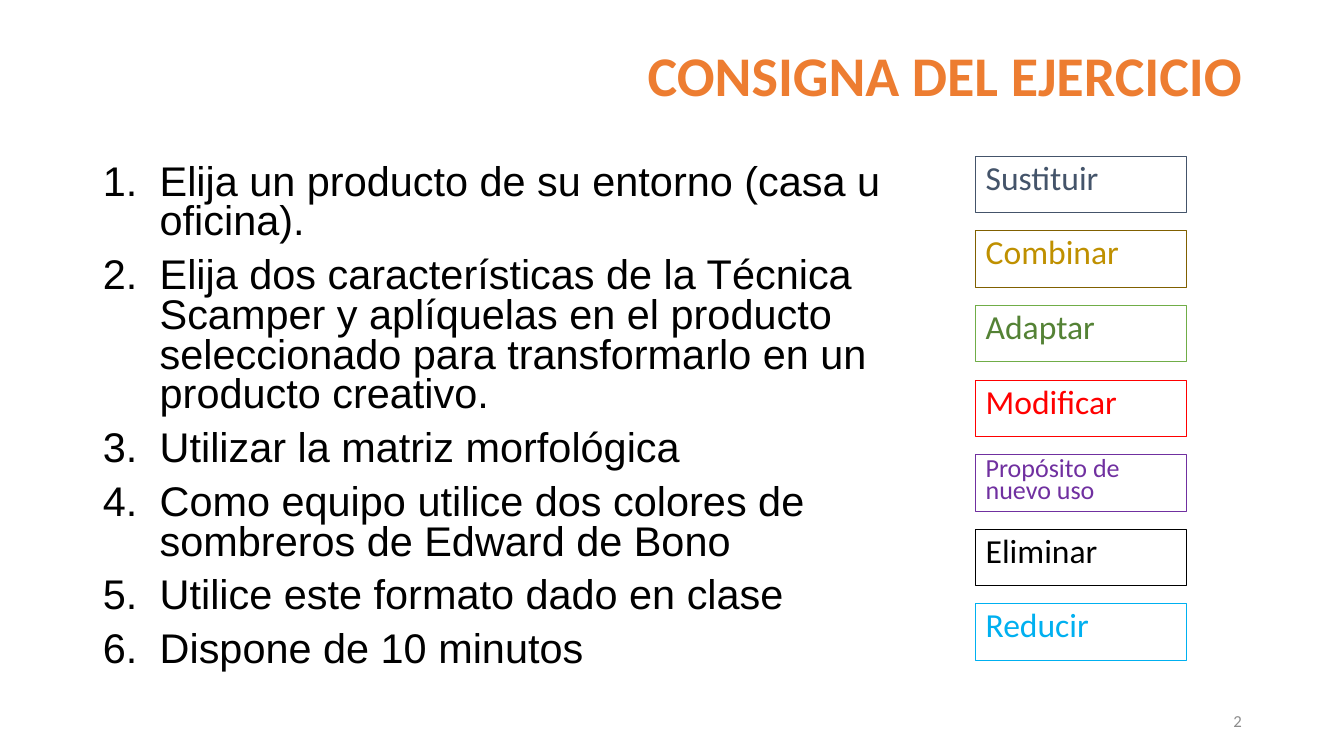
from lxml.etree import SubElement
from pptx import Presentation
from pptx.dml.color import RGBColor
from pptx.enum.shapes import MSO_SHAPE as Shape
from pptx.enum.text import MSO_ANCHOR as Anchor, MSO_AUTO_SIZE as Auto, PP_ALIGN as Align
from pptx.oxml.ns import qn
from pptx.util import Cm, Pt

STEPS = [
    "Elija un producto de su entorno (casa u oficina).",
    "Elija dos características de la Técnica Scamper y aplíquelas en el producto "
    "seleccionado para transformarlo en un producto creativo.",
    "Utilizar la matriz morfológica",
    "Como equipo utilice dos colores de sombreros de Edward de Bono",
    "Utilice este formato dado en clase",
    "Dispone de 10 minutos",
]
CARDS = [
    ("Sustituir", "44546A", "44546A", 24, 0.9),
    ("Combinar", "806000", "BF9000", 24, 0.9),
    ("Adaptar", "70AD47", "548235", 24, 0.9),
    ("Modificar", "FF0000", "FF0000", 24, 0.9),
    ("Propósito de nuevo uso", "7030A0", "7030A0", 18.6, 0.7),
    ("Eliminar", "000000", "000000", 24, 0.9),
    ("Reducir", "00B0F0", "00B0F0", 24, 0.9),
]


def paint(hue):
    """Turn a hex string into a colour."""
    return RGBColor.from_string(hue)


def place(item, left, top, width, height):
    """Move and size a shape, in centimetres."""
    item.left, item.top = Cm(left), Cm(top)
    item.width, item.height = Cm(width), Cm(height)


def setup(frame, anchor):
    """Make a text frame wrap at a fixed size."""
    frame.word_wrap = True
    frame.auto_size = Auto.NONE
    frame.vertical_anchor = anchor


def write(para, text, face, size, hue, bold=False):
    """Add one formatted run."""
    run = para.add_run()
    run.text = text
    font = run.font
    font.name, font.size, font.bold = face, Pt(size), bold
    font.color.rgb = paint(hue)


def space(para, align, line, before=0):
    """Set the alignment and spacing of a paragraph."""
    para.alignment, para.line_spacing = align, line
    para.space_before, para.space_after = Pt(before), Pt(0)


def number(para):
    """Number a paragraph with a hanging indent."""
    props = para._p.get_or_add_pPr()
    props.set("marL", str(Cm(1.43)))
    props.set("indent", str(-Cm(1.43)))
    SubElement(props, qn("a:buFont"), typeface="+mj-lt")
    SubElement(props, qn("a:buAutoNum"), type="arabicPeriod")


def head(slide, text):
    """Fill the title placeholder."""
    title = slide.shapes.title
    place(title, 5.41, 1.02, 26.14, 1.93)
    setup(title.text_frame, Anchor.MIDDLE)
    para = title.text_frame.paragraphs[0]
    space(para, Align.RIGHT, 0.9)
    write(para, text, "Calibri", 40, "ED7D31", True)


def steps(slide, items):
    """Fill the body placeholder with a numbered list."""
    body = slide.placeholders[1]
    place(body, 2.34, 4.01, 21.03, 13.26)
    frame = body.text_frame
    setup(frame, Anchor.TOP)
    for i, text in enumerate(items):
        para = frame.add_paragraph() if i else frame.paragraphs[0]
        space(para, Align.LEFT, 0.8, 10)
        number(para)
        write(para, text, "Arial", 29.6, "000000")


def card(slide, top, text, edge, hue, size, line):
    """Draw one outlined box with its label."""
    box = slide.shapes.add_shape(Shape.RECTANGLE, Cm(24.59), Cm(top), Cm(5.31), Cm(1.42))
    box.shadow.inherit = False
    box.fill.background()
    box.line.color.rgb = paint(edge)
    box.line.width = Pt(0.75)
    setup(box.text_frame, Anchor.TOP)
    para = box.text_frame.paragraphs[0]
    space(para, Align.LEFT, line, 10)
    write(para, text, "Calibri", size, hue)


def folio(slide, text):
    """Add the slide number."""
    box = slide.shapes.add_textbox(Cm(23.93), Cm(17.65), Cm(7.62), Cm(1.02))
    setup(box.text_frame, Anchor.MIDDLE)
    para = box.text_frame.paragraphs[0]
    space(para, Align.RIGHT, 1.0)
    write(para, text, "Calibri", 12, "8C8C8C")


def main():
    """Build the slide and save it."""
    deck = Presentation()
    deck.slide_width, deck.slide_height = Cm(33.87), Cm(19.05)
    slide = deck.slides.add_slide(deck.slide_layouts[1])
    head(slide, "CONSIGNA DEL EJERCICIO")
    steps(slide, STEPS)
    folio(slide, "2")
    for i, data in enumerate(CARDS):
        card(slide, 3.94 + 1.88 * i, *data)
    deck.save("out.pptx")


if __name__ == "__main__":
    main()
